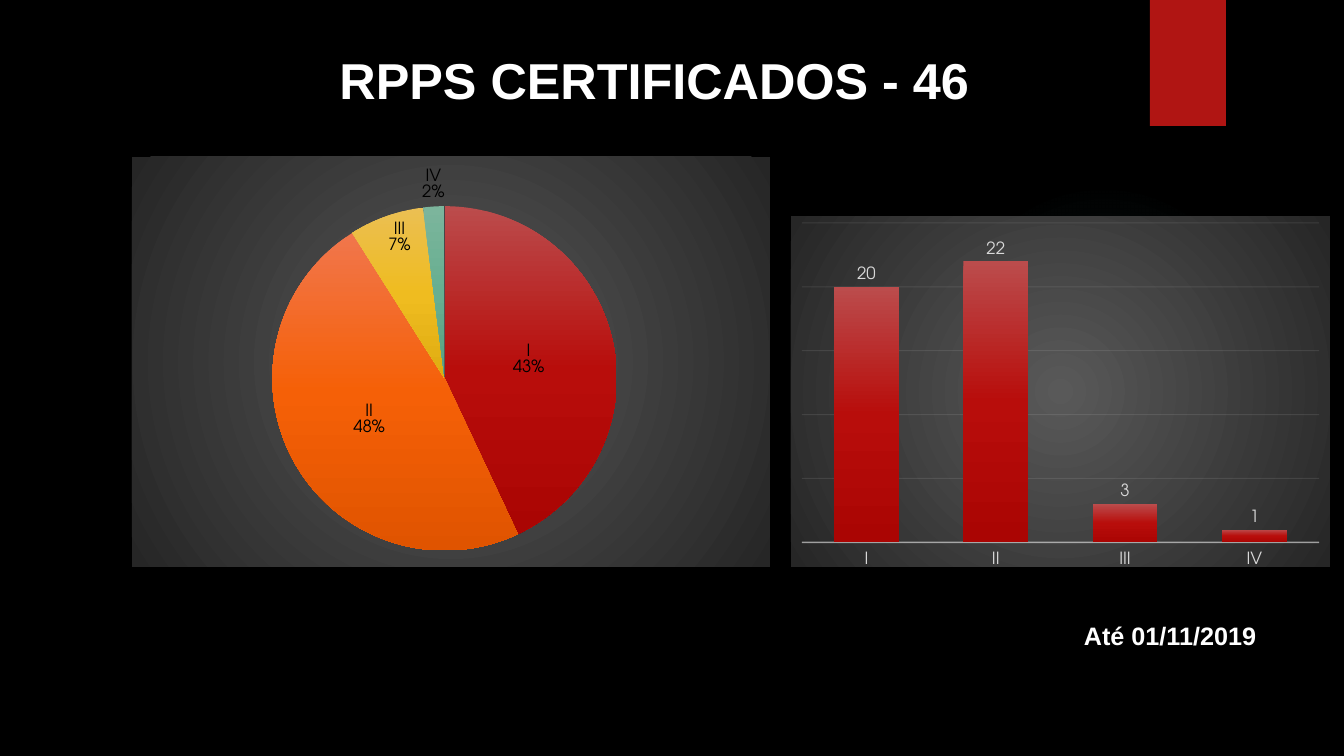
from lxml import etree
from pptx import Presentation
from pptx.chart.data import CategoryChartData
from pptx.dml.color import RGBColor
from pptx.enum.chart import XL_CHART_TYPE, XL_LABEL_POSITION, XL_TICK_LABEL_POSITION, XL_TICK_MARK
from pptx.enum.shapes import MSO_SHAPE
from pptx.enum.text import MSO_ANCHOR, MSO_AUTO_SIZE, PP_ALIGN
from pptx.oxml import parse_xml
from pptx.oxml.ns import nsdecls, qn
from pptx.util import Pt

PIE, COLUMN = XL_CHART_TYPE.PIE, XL_CHART_TYPE.COLUMN_CLUSTERED
CENTER, IN_END, OUT_END = (XL_LABEL_POSITION.CENTER, XL_LABEL_POSITION.INSIDE_END,
                           XL_LABEL_POSITION.OUTSIDE_END)
LOW, NO_TICK = XL_TICK_LABEL_POSITION.LOW, XL_TICK_MARK.NONE

# Content
TITLE = "RPPS CERTIFICADOS - 46"
DATE = "Até 01/11/2019"
LEVELS = ["I", "II", "III", "IV"]
SHARES = [43, 48, 7, 2]
COUNTS = [20, 22, 3, 1]

# Style
BLACK = RGBColor(0, 0, 0)
WHITE = RGBColor(255, 255, 255)
RED = RGBColor(0xB0, 0x15, 0x13)
PALE = RGBColor(0xD9, 0xD9, 0xD9)
LINE = RGBColor(0xF2, 0xF2, 0xF2)
TEAL = RGBColor(0x50, 0xB9, 0xC1)
PANEL = [RGBColor(0x59, 0x59, 0x59), RGBColor(0x26, 0x26, 0x26)]
RAMPS = [
    [RGBColor(0xBB, 0x4C, 0x4C), RGBColor(0xB8, 0x0D, 0x0B), RGBColor(0xAA, 0x05, 0x03)],
    [RGBColor(0xF1, 0x76, 0x4C), RGBColor(0xF5, 0x60, 0x07), RGBColor(0xE0, 0x54, 0x00)],
    [RGBColor(0xEB, 0xBF, 0x53), RGBColor(0xEF, 0xBC, 0x20), RGBColor(0xDF, 0xAC, 0x11)],
    [RGBColor(0x7C, 0xB5, 0x9C), RGBColor(0x67, 0xAF, 0x91), RGBColor(0x58, 0x9F, 0x81)],
]
HEAD, BODY = "Arial", "TeX Gyre Adventor"
SCALE = 914400 / 100.8


def px(*nums):
    return [round(n * SCALE) for n in nums]


def grad(stops, round_fill=False):
    """Gradient fill from (percent, colour, opacity) stops."""
    marks = "".join(
        f'<a:gs pos="{pos * 1000}"><a:srgbClr val="{tone}">'
        f'<a:alpha val="{alpha * 1000}"/></a:srgbClr></a:gs>' for pos, tone, alpha in stops)
    way = ('<a:path path="circle"><a:fillToRect l="50000" t="50000" r="50000" b="50000"/></a:path>'
           if round_fill else '<a:lin ang="5400000" scaled="0"/>')
    return parse_xml(f'<a:gradFill {nsdecls("a")} rotWithShape="1">'
                     f'<a:gsLst>{marks}</a:gsLst>{way}</a:gradFill>')


def even(tones):
    return [(100 * i // (len(tones) - 1), tone, 100) for i, tone in enumerate(tones)]


def fade(root, pct):
    for tone in root.iter(qn("a:srgbClr")):
        etree.SubElement(tone, qn("a:alpha"), val=str(pct * 1000))


def style(font, name, size, tone, bold=False):
    font.name, font.size, font.bold = name, Pt(size), bold
    font.color.rgb = tone


def write(frame, text, size, align):
    frame.auto_size = MSO_AUTO_SIZE.SHAPE_TO_FIT_TEXT
    frame.vertical_anchor = MSO_ANCHOR.TOP
    para = frame.paragraphs[0]
    para.alignment = align
    run = para.add_run()
    run.text = text
    style(run.font, HEAD, size, WHITE, True)


def add_chart(slide, kind, box, vals, plot):
    """Chart on a dark panel; box and plot are left, top, width, height."""
    data = CategoryChartData()
    data.categories = LEVELS
    data.add_series("Series 1", vals)
    chart = slide.shapes.add_chart(kind, *px(*box), data).chart
    chart.has_title = chart.has_legend = False
    style(chart.font, BODY, 10, WHITE)
    panel = parse_xml(f'<c:spPr {nsdecls("c", "a")}><a:ln><a:noFill/></a:ln></c:spPr>')
    panel.insert(0, grad(even(PANEL), True))
    root = chart._chartSpace
    root.find(qn("c:txPr")).addprevious(panel)
    parts = [(plot[0] - box[0]) / box[2], (plot[1] - box[1]) / box[3],
             plot[2] / box[2], plot[3] / box[3]]
    nums = "".join(f'<c:{tag} val="{part:.2f}"/>' for tag, part in zip("xywh", parts))
    area = root.find(".//" + qn("c:plotArea"))
    for old in area.findall(qn("c:layout")):
        area.remove(old)
    area.insert(0, parse_xml(
        f'<c:layout {nsdecls("c")}><c:manualLayout><c:layoutTarget val="inner"/>'
        f'<c:xMode val="edge"/><c:yMode val="edge"/>{nums}</c:manualLayout></c:layout>'))
    return chart


def show_share(label, node, spot):
    """Category over percentage."""
    style(label.font, BODY, 12, BLACK)
    label.position = spot
    for tag, flag in (("showVal", "0"), ("showCatName", "1"), ("showPercent", "1")):
        node.find(qn("c:" + tag)).set("val", flag)
    gap = etree.Element(qn("c:separator"))
    gap.text = "\n"
    node.find(qn("c:showBubbleSize")).addnext(gap)


deck = Presentation()
deck.slide_width, deck.slide_height = px(1344, 756)
slide = deck.slides.add_slide(deck.slide_layouts[5])
slide.background.fill.solid()
slide.background.fill.fore_color.rgb = BLACK

# Glow and red tab
glow = slide.shapes.add_shape(MSO_SHAPE.OVAL, *px(949, 184, 310, 310))
tab = slide.shapes.add_shape(MSO_SHAPE.RECTANGLE, *px(1150, 0, 76, 126))
for shape in (glow, tab):
    shape.shadow.inherit = False
    shape.line.fill.background()
tab.fill.solid()
tab.fill.fore_color.rgb = RED
glow.element.spPr.find(qn("a:prstGeom")).addnext(
    grad([(0, TEAL, 7), (36, TEAL, 6), (69, TEAL, 0)], True))

# Title and date
title = slide.shapes.title
title.left, title.top, title.width, title.height = px(-11, 44, 1331, 72)
write(title.text_frame, TITLE, 36, PP_ALIGN.CENTER)
date = slide.shapes.add_textbox(*px(1074, 615, 194, 40))
date.text_frame.word_wrap = False
write(date.text_frame, DATE, 18, PP_ALIGN.LEFT)

# Pie of shares
pie = add_chart(slide, PIE, (132, 157, 638, 410), SHARES, (274, 208, 345, 345))
slices = pie.plots[0].series[0]
labels = slices.data_labels
show_share(labels, labels._element, OUT_END)
for i, spot in enumerate((CENTER, CENTER, IN_END)):
    label = slices.points[i].data_label
    label.position = spot
    show_share(label, labels._element.findall(qn("c:dLbl"))[i], spot)
for i, ramp in enumerate(RAMPS):
    slices._element.get_or_add_dPt_for_point(i).get_or_add_spPr().insert(0, grad(even(ramp)))

# Columns of counts
bars = add_chart(slide, COLUMN, (791, 216, 539, 352), COUNTS, (802, 222, 518, 319))
plot = bars.plots[0]
plot.gap_width, plot.overlap, plot.vary_by_categories = 100, -24, False
series = plot.series[0]
series._element.get_or_add_spPr().insert(0, grad(even(RAMPS[0])))
series.data_labels.show_value = True
series.data_labels.position = OUT_END
style(series.data_labels.font, BODY, 12, PALE)

# Axes
base, rise = bars.category_axis, bars.value_axis
base.major_tick_mark = base.minor_tick_mark = NO_TICK
base.tick_label_position = LOW
style(base.tick_labels.font, BODY, 12, PALE)
rise.minimum_scale, rise.maximum_scale, rise.major_unit = 0, 25, 5
rise.visible = False
rise.has_major_gridlines = True
for line, width in ((base.format.line, 1), (rise.major_gridlines.format.line, 0.75)):
    line.color.rgb = LINE
    line.width = Pt(width)
fade(base._element.find(qn("c:spPr")), 54)
fade(rise._element.find(qn("c:majorGridlines")), 10)

deck.save("out.pptx")
